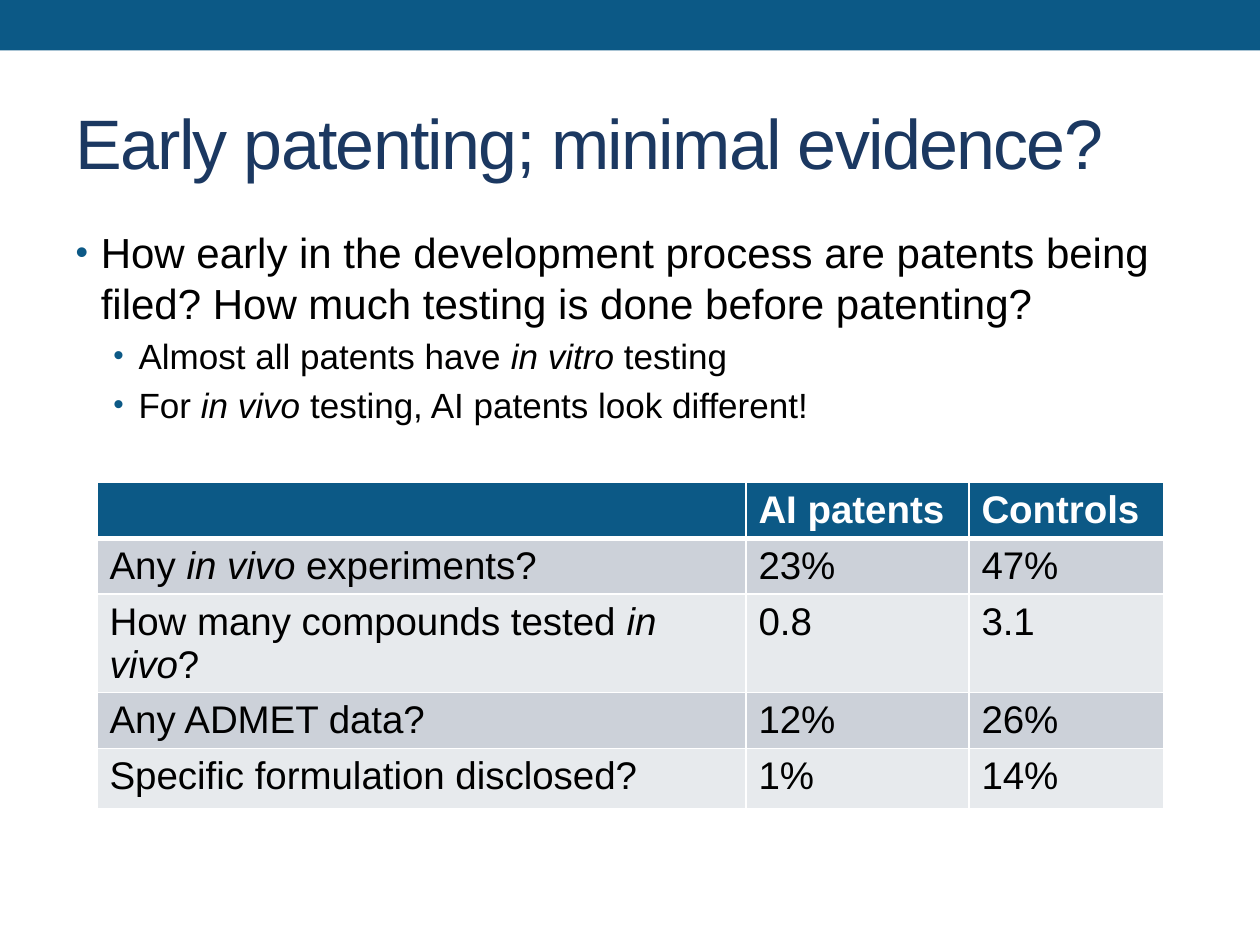
from lxml.etree import SubElement
from pptx import Presentation
from pptx.dml.color import RGBColor
from pptx.enum.shapes import MSO_SHAPE
from pptx.enum.text import MSO_ANCHOR, PP_ALIGN
from pptx.oxml.ns import qn
from pptx.util import Inches, Pt

COLORS = {
    "accent": "0C5986",
    "title": "1B3861",
    "text": "000000",
    "white": "FFFFFF",
    "band_dark": "CCD1D9",
    "band_light": "E7EAED",
}
FONT = "Arial"
TITLE = "Early patenting; minimal evidence?"

# Pieces of each text alternate between upright and italic.
BULLETS = [
    (0, ["How early in the development process are patents being filed? "
         "How much testing is done before patenting?"]),
    (1, ["Almost all patents have ", "in vitro", " testing"]),
    (1, ["For ", "in vivo ", "testing, AI patents look different!"]),
]
BULLET_LEVELS = [{"size": 24, "left": 0.2}, {"size": 20, "left": 0.5}]
HANGING = 0.2

TABLE = [
    [[], ["AI patents"], ["Controls"]],
    [["Any ", "in vivo", " experiments?"], ["23%"], ["47%"]],
    [["How many compounds tested ", "in vivo", "?"], ["0.8"], ["3.1"]],
    [["Any ADMET data?"], ["12%"], ["26%"]],
    [["Specific formulation disclosed?"], ["1%"], ["14%"]],
]
COLUMN_WIDTHS = [5.15, 1.77, 1.55]
ROW_HEIGHTS = [0.34, 0.34, 0.48, 0.34, 0.48]


def color(name):
    return RGBColor.from_string(COLORS[name])


def place(shape, left, top, width, height):
    shape.left, shape.top = Inches(left), Inches(top)
    shape.width, shape.height = Inches(width), Inches(height)


def add_spans(para, pieces, size, color_name, bold=False):
    for index, piece in enumerate(pieces):
        span = para.add_run()
        span.text = piece
        span.font.name = FONT
        span.font.size = Pt(size)
        span.font.bold = bold
        span.font.italic = index % 2 == 1
        span.font.color.rgb = color(color_name)


def add_bullet(para, left):
    properties = para._p.get_or_add_pPr()
    properties.set("marL", str(Inches(left)))
    properties.set("indent", str(-Inches(HANGING)))
    bullet_color = SubElement(properties, qn("a:buClr"))
    SubElement(bullet_color, qn("a:srgbClr"), val=COLORS["accent"])
    SubElement(properties, qn("a:buSzPct"), val="85000")
    SubElement(properties, qn("a:buFont"), typeface=FONT)
    SubElement(properties, qn("a:buChar"), char="•")


def style_cell(cell, fill_name, bottom_width):
    properties = cell._tc.get_or_add_tcPr()
    widths = {"a:lnL": 1, "a:lnR": 1, "a:lnT": 1, "a:lnB": bottom_width}
    for tag, width in widths.items():
        line = SubElement(properties, qn(tag), w=str(Pt(width)))
        fill = SubElement(line, qn("a:solidFill"))
        SubElement(fill, qn("a:srgbClr"), val=COLORS["white"])
    cell.fill.solid()
    cell.fill.fore_color.rgb = color(fill_name)


def add_banner(page):
    banner = page.shapes.add_shape(
        MSO_SHAPE.RECTANGLE, 0, 0, Inches(10), Inches(0.4))
    banner.shadow.inherit = False
    banner.fill.solid()
    banner.fill.fore_color.rgb = color("accent")
    banner.line.fill.background()


def add_title(page):
    title = page.shapes.title
    place(title, 0.5, 0.58, 9, 1.08)
    title.text_frame.vertical_anchor = MSO_ANCHOR.MIDDLE
    para = title.text_frame.paragraphs[0]
    para.alignment = PP_ALIGN.LEFT
    add_spans(para, [TITLE], 40, "title")
    para.runs[0].font._element.set("spc", "-100")


def add_body(page):
    body = page.placeholders[1]
    place(body, 0.5, 1.75, 9, 5.33)
    frame = body.text_frame
    for index, (level, pieces) in enumerate(BULLETS):
        para = frame.add_paragraph() if index else frame.paragraphs[0]
        para.level = level
        add_bullet(para, BULLET_LEVELS[level]["left"])
        add_spans(para, pieces, BULLET_LEVELS[level]["size"], "text")


def add_results(page):
    frame = page.shapes.add_table(
        len(TABLE), len(COLUMN_WIDTHS), Inches(0.77), Inches(3.83),
        Inches(sum(COLUMN_WIDTHS)), Inches(sum(ROW_HEIGHTS)))
    table = frame.table
    for column, width in zip(table.columns, COLUMN_WIDTHS):
        column.width = Inches(width)
    for row, height in zip(table.rows, ROW_HEIGHTS):
        row.height = Inches(height)
    frame.height = Inches(2.72)
    for row_index, values in enumerate(TABLE):
        header = row_index == 0
        band = "band_dark" if row_index % 2 else "band_light"
        for column_index, pieces in enumerate(values):
            cell = table.cell(row_index, column_index)
            style_cell(cell, "accent" if header else band, 3 if header else 1)
            add_spans(cell.text_frame.paragraphs[0], pieces, 22,
                      "white" if header else "text", header)


def main():
    deck = Presentation()
    deck.slide_width, deck.slide_height = Inches(10), Inches(7.5)
    page = deck.slides.add_slide(deck.slide_layouts[1])
    add_banner(page)
    add_title(page)
    add_body(page)
    add_results(page)
    deck.save("out.pptx")


if __name__ == "__main__":
    main()
